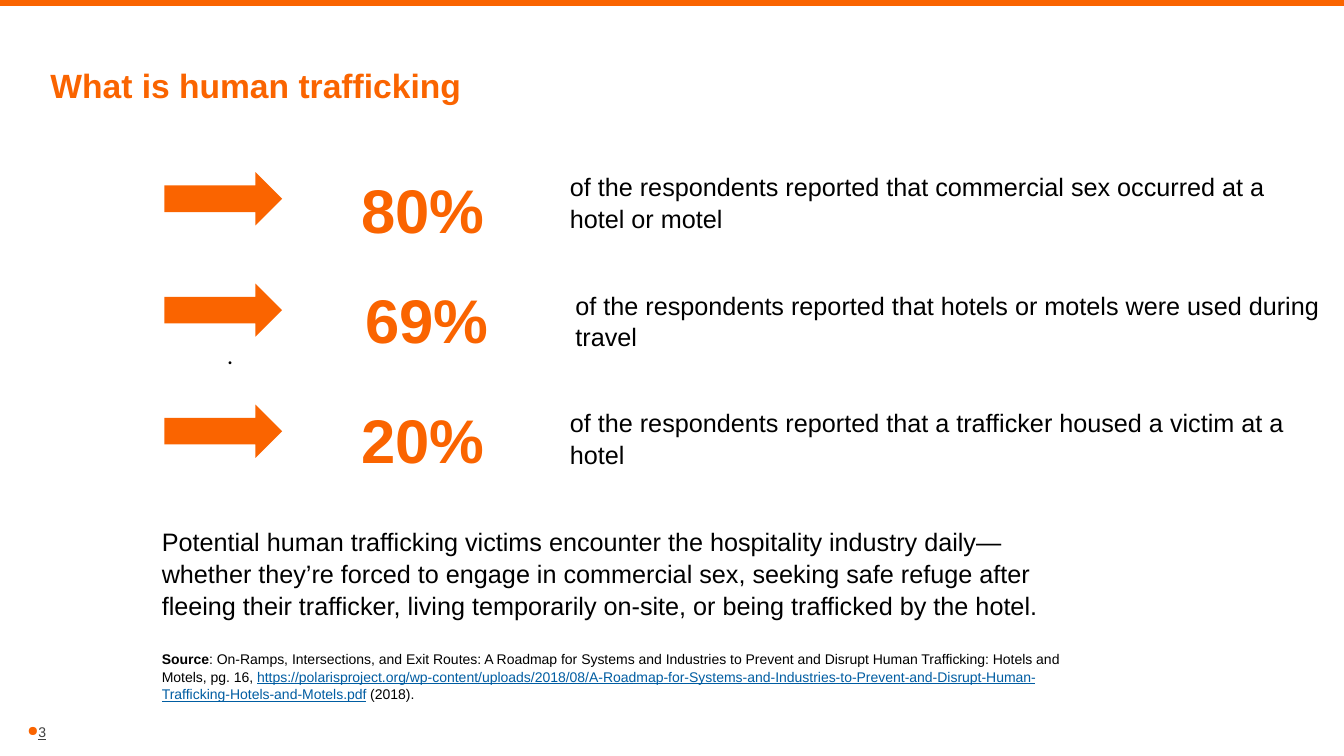
import pptx
import pptx.util
import pptx.dml.color
import pptx.enum.shapes
import pptx.enum.text
import pptx.oxml.ns
import lxml.etree

Pt = pptx.util.Pt
ALIGN = pptx.enum.text.PP_ALIGN
ANCHOR = pptx.enum.text.MSO_ANCHOR
COLORS = {"orange": "FA6400", "black": "000000", "gray": "404040", "link": "005DA2"}

STATS = [
    (123, 251, 116.5, 400, 118, "80%",
     "of the respondents reported that commercial sex occurred at a hotel or motel"),
    (202.5, 254, 195, 404, 202.5, "69%",
     "of the respondents reported that hotels or motels were used during travel"),
    (289, 251, 281, 400, 286.5, "20%",
     "of the respondents reported that a trafficker housed a victim at a hotel"),
]
SUMMARY = (
    "Potential human trafficking victims encounter the hospitality industry daily—"
    "whether they’re forced to engage in commercial sex, seeking safe refuge after "
    "fleeing their trafficker, living temporarily on-site, or being trafficked by the hotel."
)
SOURCE = [
    ("Source", {"bold": True}),
    (": On-Ramps, Intersections, and Exit Routes: A Roadmap for Systems and Industries "
     "to Prevent and Disrupt Human Trafficking: Hotels and Motels, pg. 16, ", {}),
    ("https://polarisproject.org/wp-content/uploads/2018/08/A-Roadmap-for-Systems-and-"
     "Industries-to-Prevent-and-Disrupt-Human-Trafficking-Hotels-and-Motels.pdf",
     {"color": "link", "underline": True}),
    (" (2018).", {}),
]


class SlideBuilder:
    def __init__(self, page):
        self.page = page

    def color(self, name):
        return pptx.dml.color.RGBColor.from_string(COLORS[name])

    def style(self, font, size, color="black", bold=False, underline=False, name="Arial"):
        font.name = name
        font.size = Pt(size)
        font.bold = bold
        font.underline = underline
        font.color.rgb = self.color(color)

    def frame(self, box, margins=(0, 0), anchor=ANCHOR.TOP):
        frame = box.text_frame
        frame.word_wrap = True
        frame.vertical_anchor = anchor
        frame.margin_left = frame.margin_right = Pt(margins[0])
        frame.margin_top = frame.margin_bottom = Pt(margins[1])
        return frame

    def title(self, text, left, top, width, height):
        box = self.page.shapes.title
        box.left, box.top, box.width, box.height = map(Pt, (left, top, width, height))
        self.frame(box).text = text
        para = box.text_frame.paragraphs[0]
        para.alignment = ALIGN.LEFT
        para.line_spacing = 0.85
        self.style(para.runs[0].font, 24, "orange", bold=True)

    def text(self, text, left, top, width, height, size, spacing=1.05, align=ALIGN.LEFT,
             margins=(7.2, 3.6), anchor=ANCHOR.TOP, bullet=None, **look):
        box = self.page.shapes.add_textbox(Pt(left), Pt(top), Pt(width), Pt(height))
        frame = self.frame(box, margins, anchor)
        frame.text = text
        para = frame.paragraphs[0]
        para.alignment = align
        para.line_spacing = spacing
        if bullet:
            self.bullet(para, bullet)
        self.style(para.runs[0].font, size, **look)
        return frame

    def bullet(self, para, color):
        qn = pptx.oxml.ns.qn
        properties = para._p.get_or_add_pPr()
        shade = lxml.etree.SubElement(properties, qn("a:buClr"))
        lxml.etree.SubElement(shade, qn("a:srgbClr"), val=COLORS[color])
        lxml.etree.SubElement(properties, qn("a:buChar"), char="●")

    def spans(self, frame, parts, size, before):
        para = frame.add_paragraph()
        para.line_spacing = 1.05
        para.space_before = Pt(before)
        for text, look in parts:
            span = para.add_run()
            span.text = text
            self.style(span.font, size, **look)

    def arrow(self, left, top, width, height):
        kind = pptx.enum.shapes.MSO_SHAPE.RIGHT_ARROW
        shape = self.page.shapes.add_shape(kind, Pt(left), Pt(top), Pt(width), Pt(height))
        shape.shadow.inherit = False
        shape.fill.solid()
        shape.fill.fore_color.rgb = self.color("orange")
        shape.line.fill.background()

    def rule(self, left, right, y, weight):
        kind = pptx.enum.shapes.MSO_CONNECTOR.STRAIGHT
        line = self.page.shapes.add_connector(kind, Pt(left), Pt(y), Pt(right), Pt(y))
        line.line.color.rgb = self.color("orange")
        line.line.width = Pt(weight)
        lxml.etree.SubElement(line._element.spPr, pptx.oxml.ns.qn("a:effectLst"))


def main():
    deck = pptx.Presentation()
    deck.slide_width, deck.slide_height = Pt(960), Pt(540)
    builder = SlideBuilder(deck.slides.add_slide(deck.slide_layouts[5]))

    builder.rule(0, 960, 2, 5)
    builder.title("What is human trafficking", 36, 51, 888, 50)
    builder.text("3", 19.5, 516, 22, 13, 10, spacing=1.0, margins=(0, 0),
                 anchor=ANCHOR.BOTTOM, bullet="orange", color="gray", underline=True)
    builder.text(".", 36, 235, 257, 31, 17, spacing=Pt(25.2), align=ALIGN.CENTER,
                 name="Calibri")

    for arrow_top, figure_left, figure_top, claim_left, claim_top, figure, claim in STATS:
        builder.arrow(117.5, arrow_top, 84, 38)
        builder.text(figure, figure_left, figure_top, 124, 60.5, 44,
                     color="orange", bold=True)
        builder.text(claim, claim_left, claim_top, 549, 51, 18)

    summary = builder.text(SUMMARY, 108.5, 371.5, 662, 165, 18)
    builder.spans(summary, SOURCE, 10, before=21)
    deck.save("out.pptx")


if __name__ == "__main__":
    main()
